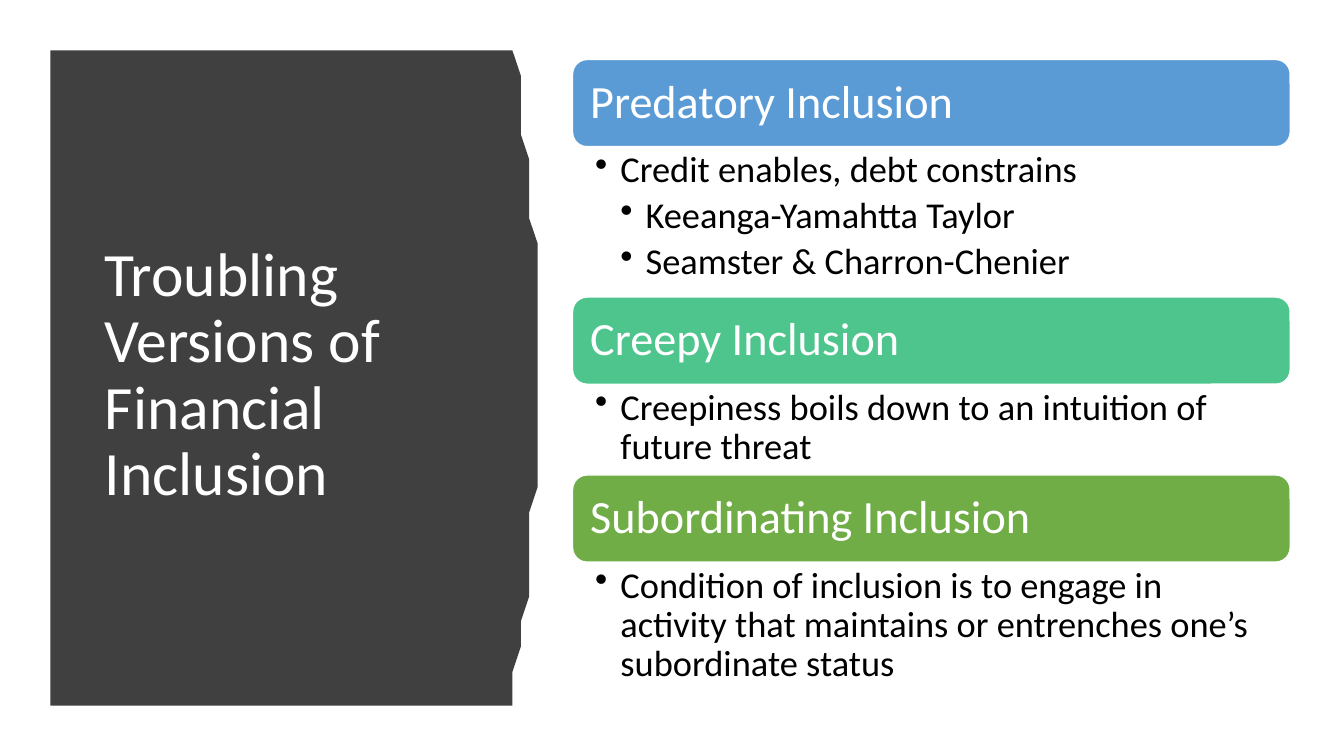
"""Build a slide on three troubling versions of financial inclusion."""
from dataclasses import dataclass

import lxml.etree
import pptx
import pptx.dml.color
import pptx.enum.shapes
import pptx.enum.text
import pptx.oxml.ns
import pptx.presentation
import pptx.shapes.base
import pptx.slide
import pptx.text.text
import pptx.util

RGBColor = pptx.dml.color.RGBColor
Anchor = pptx.enum.text.MSO_ANCHOR

COLUMNS, ROWS = 160, 90
CELL = pptx.util.Inches(7.5) / ROWS
FONT = "Calibri"

WHITE = RGBColor(0xFF, 0xFF, 0xFF)
BLACK = RGBColor(0x00, 0x00, 0x00)
CHARCOAL = RGBColor(0x40, 0x40, 0x40)
BLUE = RGBColor(0x5B, 0x9B, 0xD5)
MINT = RGBColor(0x4D, 0xC5, 0x8D)
GREEN = RGBColor(0x70, 0xAD, 0x47)

PANEL_LEFT, PANEL_RIGHT = 6.4, 61
PANEL_TOP, PANEL_MIDDLE, PANEL_BOTTOM = 6.24, 42, 83.52
PANEL_BULGE, BULGE_POWER, BULGE_STEPS = 2.9, 2.2, 24

LIST_LEFT, LIST_TOP, LIST_WIDTH = 68.16, 7.08, 85.44
HEADING_HEIGHT = 10.38
BULLET_INDENT = 3


@dataclass(frozen=True)
class Point:
    """One bulleted line and its level."""
    text: str
    level: int = 1


@dataclass(frozen=True)
class Version:
    """One version of inclusion, with the rows its points take."""
    heading: str
    color: RGBColor
    points_height: float
    points: tuple[Point, ...]


VERSIONS = (
    Version("Predatory Inclusion", BLUE, 17.9, (
        Point("Credit enables, debt constrains"),
        Point("Keeanga-Yamahtta Taylor", 2),
        Point("Seamster & Charron-Chenier", 2),
    )),
    Version("Creepy Inclusion", MINT, 10.8, (
        Point("Creepiness boils down to an intuition of future threat"),
    )),
    Version("Subordinating Inclusion", GREEN, 15.7, (
        Point("Condition of inclusion is to engage in activity that maintains "
              "or entrenches one’s subordinate status"),
    )),
)


def cells(count: float) -> pptx.util.Emu:
    """Turn grid cells into a length."""
    return pptx.util.Emu(round(count * CELL))


def box(left: float, top: float, width: float, height: float) -> tuple[pptx.util.Emu, ...]:
    """Turn a grid area into a position and size."""
    return cells(left), cells(top), cells(width), cells(height)


def add_bullet(paragraph: pptx.text.text._Paragraph, level: int) -> None:
    """Give a paragraph a hanging bullet at its level."""
    properties = paragraph._p.get_or_add_pPr()
    properties.set("marL", str(cells(BULLET_INDENT * level)))
    properties.set("indent", str(-cells(BULLET_INDENT)))
    bullet = lxml.etree.SubElement(properties, pptx.oxml.ns.qn("a:buChar"))
    bullet.set("char", "•")


def write(shape: pptx.shapes.base.BaseShape, points: tuple[Point, ...], *,
          size: float, color: RGBColor, anchor: Anchor = Anchor.MIDDLE,
          insets: tuple[float, float, float, float] = (1.2, 0.6, 1.2, 0.6),
          bulleted: bool = False, space_after: float = 0) -> None:
    """Fill a shape with formatted paragraphs."""
    frame = shape.text_frame
    frame.word_wrap = True
    frame.vertical_anchor = anchor
    (frame.margin_left, frame.margin_top,
     frame.margin_right, frame.margin_bottom) = map(cells, insets)
    for index, point in enumerate(points):
        paragraph = frame.add_paragraph() if index else frame.paragraphs[0]
        paragraph.alignment = pptx.enum.text.PP_ALIGN.LEFT
        paragraph.line_spacing = 0.9
        paragraph.space_after = pptx.util.Pt(space_after)
        run = paragraph.add_run()
        run.text = point.text
        run.font.name = FONT
        run.font.size = pptx.util.Pt(size)
        run.font.color.rgb = color
        if bulleted:
            add_bullet(paragraph, point.level)


def edge_point(step: int) -> tuple[float, float]:
    """Find a point on the bulging right edge of the title panel."""
    row = PANEL_TOP + (PANEL_BOTTOM - PANEL_TOP) * step / BULGE_STEPS
    end = PANEL_TOP if row < PANEL_MIDDLE else PANEL_BOTTOM
    distance = (row - PANEL_MIDDLE) / (end - PANEL_MIDDLE)
    return PANEL_RIGHT + PANEL_BULGE * (1 - distance ** BULGE_POWER), row


def draw_title(slide: pptx.slide.Slide) -> None:
    """Draw the dark panel and the title on it."""
    outline = slide.shapes.build_freeform(PANEL_LEFT, PANEL_TOP, scale=CELL)
    edge = [edge_point(step) for step in range(BULGE_STEPS + 1)]
    outline.add_line_segments([*edge, (PANEL_LEFT, PANEL_BOTTOM)], close=True)
    panel = outline.convert_to_shape()
    panel.shadow.inherit = False
    panel.fill.solid()
    panel.fill.fore_color.rgb = CHARCOAL
    panel.line.fill.background()
    title = slide.shapes.add_textbox(*box(11.3, 13.3, 44.9, 62.9))
    write(title, (Point("Troubling Versions of Financial Inclusion"),),
          size=44, color=WHITE)


def draw_version(slide: pptx.slide.Slide, version: Version, top: float) -> float:
    """Draw a heading bar with its points and return the row below them."""
    heading = slide.shapes.add_shape(
        pptx.enum.shapes.MSO_SHAPE.ROUNDED_RECTANGLE,
        *box(LIST_LEFT, top, LIST_WIDTH, HEADING_HEIGHT))
    heading.shadow.inherit = False
    heading.fill.solid()
    heading.fill.fore_color.rgb = version.color
    heading.line.color.rgb = WHITE
    heading.line.width = pptx.util.Pt(1)
    write(heading, (Point(version.heading),), size=33, color=WHITE,
          insets=(1.6, 1.6, 1.6, 1.6))
    points_top = top + HEADING_HEIGHT
    points = slide.shapes.add_textbox(
        *box(LIST_LEFT, points_top, LIST_WIDTH, version.points_height))
    write(points, version.points, size=26, color=BLACK, anchor=Anchor.TOP,
          insets=(2.7, 0.55, 3.1, 0.55), bulleted=True, space_after=4.7)
    return points_top + version.points_height


def main() -> None:
    """Build and save the slide."""
    deck: pptx.presentation.Presentation = pptx.Presentation()
    deck.slide_width, deck.slide_height = cells(COLUMNS), cells(ROWS)
    slide = deck.slides.add_slide(deck.slide_layouts[6])
    draw_title(slide)
    top = LIST_TOP
    for version in VERSIONS:
        top = draw_version(slide, version, top)
    deck.save("out.pptx")


if __name__ == "__main__":
    main()
